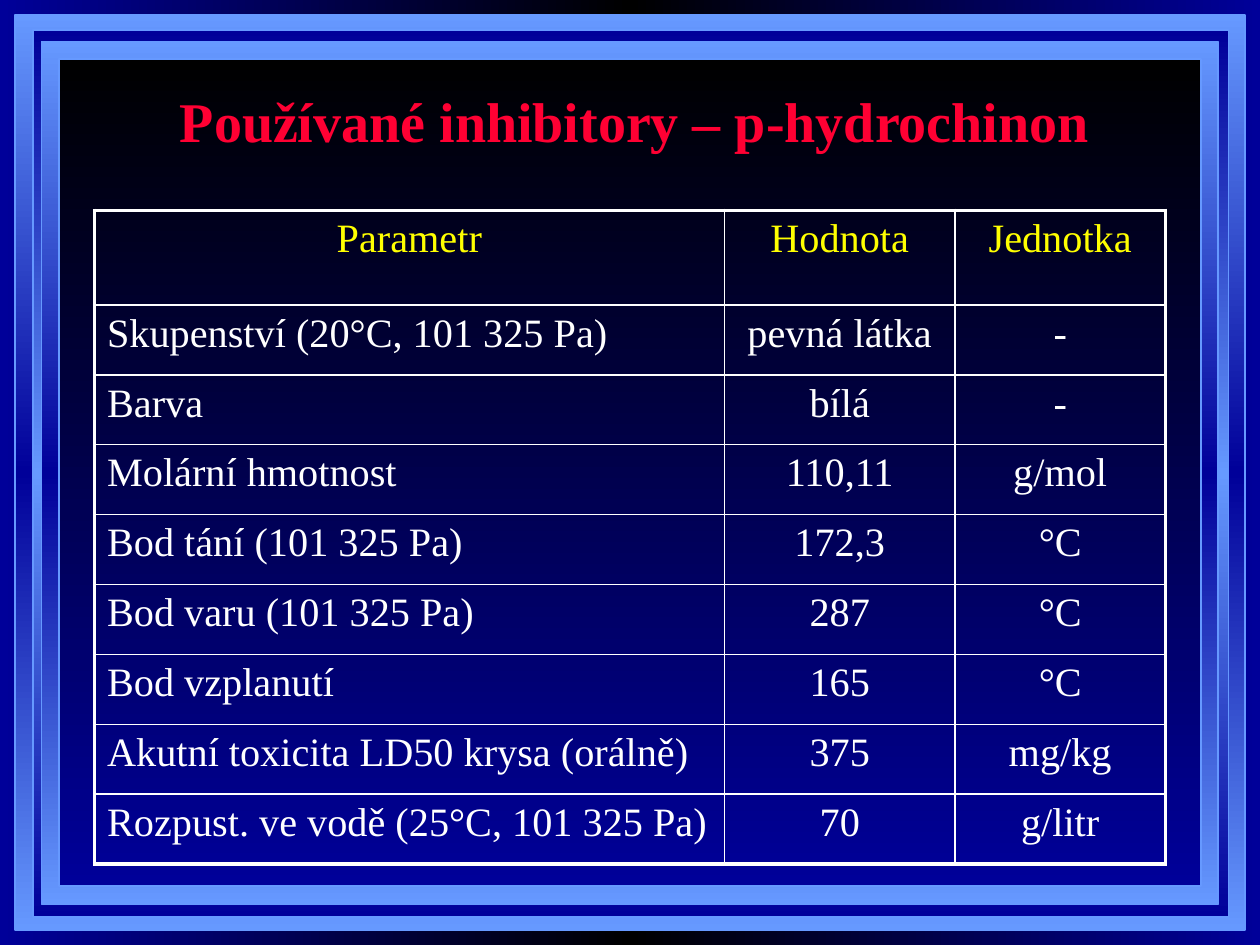
from pptx import Presentation
from pptx.dml.color import RGBColor as RGB
from pptx.enum.shapes import MSO_SHAPE as Shape
from pptx.enum.text import MSO_ANCHOR as Anchor, PP_ALIGN as Align
from pptx.oxml.ns import qn
from pptx.util import Inches, Pt
from lxml.etree import SubElement as Sub

INK = {
    "sky": "6699FF", "navy": "000099", "black": "000000",
    "red": "FF0033", "yellow": "FFFF00", "white": "FFFFFF",
}
FONT = "Times New Roman"
FRAMES = [
    ((0.12, 0.12, 9.76, 7.26), ("sky", "navy", "sky")),
    ((0.26, 0.24, 9.49, 7.04), ("navy", "sky", "navy")),
    ((0.33, 0.33, 9.34, 6.85), ("sky", "navy", "sky")),
    ((0.47, 0.47, 9.06, 6.56), ("black", "navy")),
]
ROWS = [
    ("Parametr", "Hodnota", "Jednotka"),
    ("Skupenství (20°C, 101 325 Pa)", "pevná látka", "-"),
    ("Barva", "bílá", "-"),
    ("Molární hmotnost", "110,11", "g/mol"),
    ("Bod tání (101 325 Pa)", "172,3", "°C"),
    ("Bod varu (101 325 Pa)", "287", "°C"),
    ("Bod vzplanutí", "165", "°C"),
    ("Akutní toxicita LD50 krysa (orálně)", "375", "mg/kg"),
    ("Rozpust. ve vodě (25°C, 101 325 Pa)", "70", "g/litr"),
]


def blend(fill, node, tones, angle):
    fill.gradient()
    fill.gradient_angle = angle
    stops = node.find(".//" + qn("a:gsLst"))
    for stop in list(stops):
        stops.remove(stop)
    for i, tone in enumerate(tones):
        place = str(100000 * i // (len(tones) - 1))
        stop = Sub(stops, qn("a:gs"), pos=place)
        Sub(stop, qn("a:srgbClr"), val=INK[tone])


def write(para, text, size, tone, bold=False):
    run = para.add_run()
    run.text = text
    font = run.font
    font.name, font.size, font.bold = FONT, Pt(size), bold
    font.color.rgb = RGB.from_string(INK[tone])


def add_frame(slide, box, tones):
    rect = slide.shapes.add_shape(Shape.RECTANGLE, *map(Inches, box))
    rect.shadow.inherit = False
    blend(rect.fill, rect.element, tones, 270)
    rect.line.color.rgb = RGB.from_string(INK["sky"])
    rect.line.width = Pt(1)


def add_title(slide, box, text):
    title = slide.shapes.title
    title.element.getparent().append(title.element)
    title.left, title.top, title.width, title.height = map(Inches, box)
    frame = title.text_frame
    frame.word_wrap = True
    frame.vertical_anchor = Anchor.MIDDLE
    para = frame.paragraphs[0]
    para.alignment = Align.CENTER
    write(para, text, 32, "red", True)


def set_edges(cell, edges):
    props = cell._tc.get_or_add_tcPr()
    for side, thick in edges.items():
        width = Pt(2.25 if thick else 1)
        line = Sub(props, qn("a:ln" + side), w=str(width))
        fill = Sub(line, qn("a:solidFill"))
        Sub(fill, qn("a:srgbClr"), val=INK["white"])


def set_gap(para, share):
    space = Sub(para._p.get_or_add_pPr(), qn("a:spcBef"))
    Sub(space, qn("a:spcPct"), val=str(share * 1000))


def add_grid(slide, box, rows, widths, head):
    shape = slide.shapes.add_table(len(rows), len(widths), *map(Inches, box))
    table = shape.table
    table.first_row = table.horz_banding = False
    for col, width in zip(table.columns, widths):
        col.width = Inches(width)
    step = (box[3] - head) / (len(rows) - 1)
    for r, texts in enumerate(rows):
        table.rows[r].height = Inches(step if r else head)
        for c, text in enumerate(texts):
            cell = table.cell(r, c)
            set_edges(cell, {"L": c == 0, "R": c == len(widths) - 1,
                             "T": r == 0, "B": r == len(rows) - 1})
            cell.fill.background()
            para = cell.text_frame.paragraphs[0]
            para.alignment = Align.LEFT if r and c == 0 else Align.CENTER
            set_gap(para, 20)
            write(para, text, 23, "white" if r else "yellow")


def main():
    deck = Presentation()
    deck.slide_width, deck.slide_height = Inches(10), Inches(7.5)
    slide = deck.slides.add_slide(deck.slide_layouts[5])
    blend(slide.background.fill, slide.element, ("navy", "black", "navy"), 0)
    for box, tones in FRAMES:
        add_frame(slide, box, tones)
    add_title(slide, (0.58, 0.58, 8.92, 0.75),
              "Používané inhibitory – p-hydrochinon")
    add_grid(slide, (0.75, 1.67, 8.5, 5.19), ROWS, (5, 1.83, 1.67), 0.75)
    deck.save("out.pptx")


if __name__ == "__main__":
    main()
